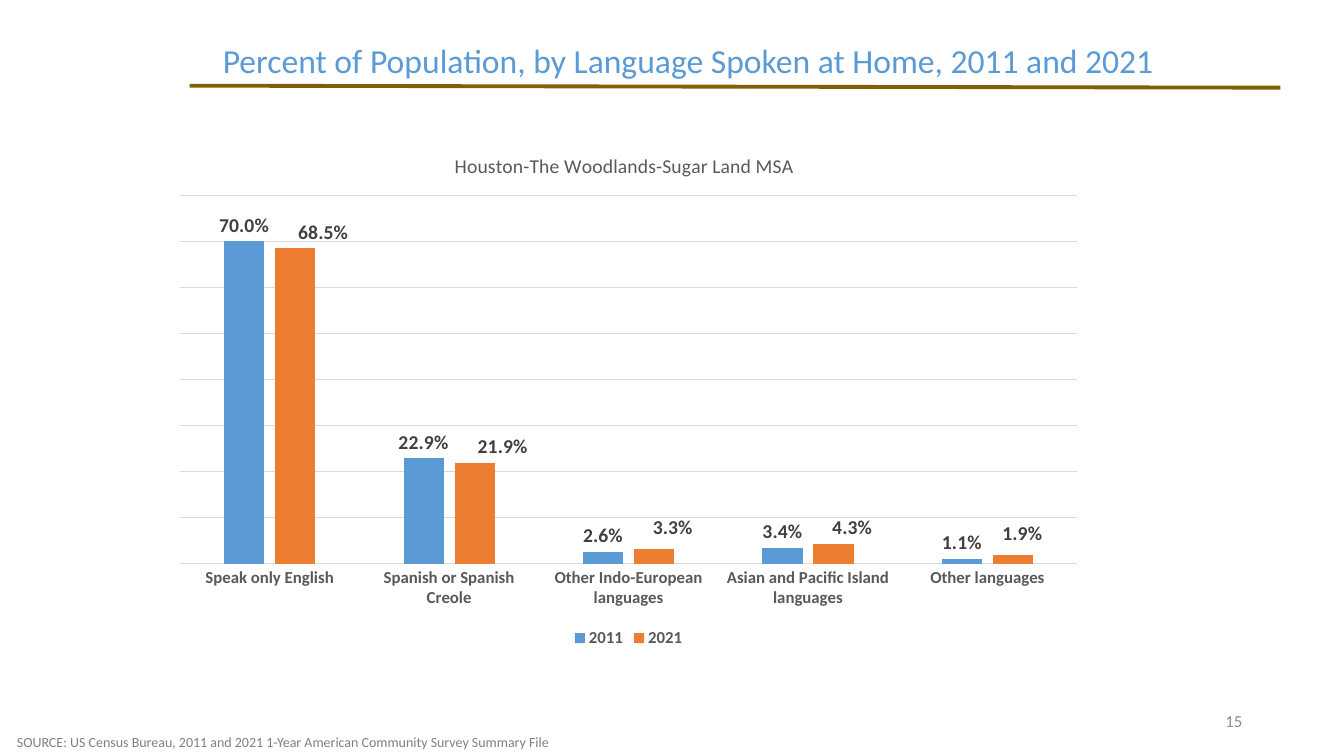
from lxml.etree import SubElement
from pptx import Presentation
from pptx.chart.data import CategoryChartData
from pptx.dml.color import RGBColor
from pptx.enum.chart import XL_CHART_TYPE, XL_LABEL_POSITION, XL_LEGEND_POSITION, XL_TICK_MARK
from pptx.enum.shapes import MSO_CONNECTOR
from pptx.enum.text import MSO_ANCHOR, PP_ALIGN
from pptx.oxml import parse_xml
from pptx.oxml.ns import nsdecls, qn
from pptx.util import Inches, Pt

BLUE = RGBColor(0x5B, 0x9B, 0xD5)
ORANGE = RGBColor(0xED, 0x7D, 0x31)
BROWN = RGBColor(0x80, 0x60, 0x00)
BLACK = RGBColor(0x00, 0x00, 0x00)
LABEL_GRAY = RGBColor(0x40, 0x40, 0x40)
AXIS_GRAY = RGBColor(0x59, 0x59, 0x59)
SOURCE_GRAY = RGBColor(0x80, 0x80, 0x80)
NUMBER_GRAY = RGBColor(0x8C, 0x8C, 0x8C)
GRID_GRAY = RGBColor(0xD9, 0xD9, 0xD9)
PERCENT = "0.0%"
NO_LEADER_LINES = (
    f'<c:extLst {nsdecls("c")}><c:ext uri="{{CE6537A1-D6FC-4f65-9D91-7224C49458BB}}" '
    'xmlns:c15="http://schemas.microsoft.com/office/drawing/2012/chart">'
    '<c15:showLeaderLines val="0"/></c:ext></c:extLst>')


def write(frame, text, size, color, align=PP_ALIGN.LEFT, anchor=MSO_ANCHOR.TOP, wrap=False):
    frame.word_wrap = wrap
    frame.vertical_anchor = anchor
    paragraph = frame.paragraphs[0]
    paragraph.text = text
    paragraph.alignment = align
    style(paragraph.font, size, color)
    return paragraph


def style(font, size, color, bold=False):
    font.name = "Calibri"
    font.size = Pt(size)
    font.bold = bold
    font.color.rgb = color


presentation = Presentation()
presentation.slide_width = Inches(13.33)
presentation.slide_height = Inches(7.5)
slide = presentation.slides.add_slide(presentation.slide_layouts[5])
shapes = slide.shapes

# Title and rule
title = shapes.title
title.left, title.top = Inches(2.11), Inches(0.39)
title.width, title.height = Inches(10), Inches(0.46)
heading = write(title.text_frame, "Percent of Population, by Language Spoken at Home, 2011 and 2021",
                24, BLUE, anchor=MSO_ANCHOR.MIDDLE, wrap=True)
heading.line_spacing = 0.9

rule = shapes.add_connector(MSO_CONNECTOR.STRAIGHT, Inches(1.88), Inches(0.85),
                            Inches(12.7), Inches(0.87))
rule.line.color.rgb = BROWN
rule.line.width = Pt(2.75)
SubElement(rule._element.spPr, qn("a:effectLst"))

# Footer
number_box = shapes.add_textbox(Inches(9.42), Inches(6.95), Inches(3), Inches(0.4))
write(number_box.text_frame, "15", 12, NUMBER_GRAY, align=PP_ALIGN.RIGHT,
      anchor=MSO_ANCHOR.MIDDLE, wrap=True)
source_box = shapes.add_textbox(Inches(0.07), Inches(7.23), Inches(5.57), Inches(0.27))
write(source_box.text_frame,
      "SOURCE: US Census Bureau, 2011 and 2021 1-Year American Community Survey Summary File",
      10, SOURCE_GRAY)

# Chart
data = CategoryChartData(number_format=PERCENT)
data.categories = ["Speak only English", "Spanish or Spanish Creole",
                   "Other Indo-European languages", "Asian and Pacific Island languages",
                   "Other languages"]
data.add_series("2011", [0.7, 0.229, 0.026, 0.034, 0.011])
data.add_series("2021", [0.685, 0.219, 0.033, 0.043, 0.019])
chart = shapes.add_chart(XL_CHART_TYPE.COLUMN_CLUSTERED, Inches(1.6), Inches(1.32),
                         Inches(9.27), Inches(5.15), data).chart
style(chart.font, 10, BLACK)

chart.has_title = True
write(chart.chart_title.text_frame, "Houston-The Woodlands-Sugar Land MSA", 14, AXIS_GRAY,
      align=PP_ALIGN.CENTER)
chart.chart_title.include_in_layout = False

chart.has_legend = True
chart.legend.position = XL_LEGEND_POSITION.BOTTOM
chart.legend.include_in_layout = False
style(chart.legend.font, 12, AXIS_GRAY, bold=True)

category_axis = chart.category_axis
category_axis.major_tick_mark = XL_TICK_MARK.NONE
category_axis.format.line.color.rgb = GRID_GRAY
category_axis.format.line.width = Pt(0.75)
style(category_axis.tick_labels.font, 12, AXIS_GRAY, bold=True)

value_axis = chart.value_axis
value_axis.visible = False
value_axis.minimum_scale, value_axis.maximum_scale = 0, 0.8
value_axis.major_unit = 0.1
value_axis.tick_labels.number_format = PERCENT
value_axis.tick_labels.number_format_is_linked = False
value_axis.has_major_gridlines = True
value_axis.major_gridlines.format.line.color.rgb = GRID_GRAY
value_axis.major_gridlines.format.line.width = Pt(0.75)

plot = chart.plots[0]
plot.vary_by_categories = False
plot.gap_width = 219
plot.overlap = -27
for series, color in zip(plot.series, (BLUE, ORANGE)):
    series.format.fill.solid()
    series.format.fill.fore_color.rgb = color
    labels = series.data_labels
    labels.show_value = True
    labels.number_format = PERCENT
    labels.number_format_is_linked = False
    labels.position = XL_LABEL_POSITION.OUTSIDE_END
    style(labels.font, 14, LABEL_GRAY, bold=True)
    labels._element.append(parse_xml(NO_LEADER_LINES))

# Manual places, as fractions of the chart: 2021 labels, title and plot area
label_shifts = [(0.03, 0), (0.03, 0), (0.02, -0.01), (0.02, 0), (0.01, -0.01)]
layouts = []
for index, (x, y) in enumerate(label_shifts):
    label = plot.series[1].points[index].data_label
    style(label.font, 14, LABEL_GRAY, bold=True)
    label.position = XL_LABEL_POSITION.OUTSIDE_END
    id_element = plot.series[1].data_labels._element.findall(qn("c:dLbl"))[index].find(qn("c:idx"))
    id_element.addnext(parse_xml(
        f'<c:numFmt {nsdecls("c")} formatCode="{PERCENT}" sourceLinked="0"/>'))
    layouts.append((id_element, {"x": x, "y": y}))
layouts.append((chart.chart_title._element.find(qn("c:tx")),
                {"xMode": "edge", "yMode": "edge", "x": 0.31, "y": 0.03}))
plot_area = chart._chartSpace.chart.plotArea
for layout in plot_area.findall(qn("c:layout")):
    plot_area.remove(layout)
layouts.append((None, {"layoutTarget": "inner", "xMode": "edge", "yMode": "edge",
                       "x": 0.02, "y": 0.12, "w": 0.96, "h": 0.71}))
for previous, settings in layouts:
    layout = parse_xml(f'<c:layout {nsdecls("c")}><c:manualLayout/></c:layout>')
    for name, value in settings.items():
        SubElement(layout[0], qn(f"c:{name}")).set("val", str(value))
    if previous is None:
        plot_area.insert(0, layout)
    else:
        for old_layout in previous.getparent().findall(qn("c:layout")):
            previous.getparent().remove(old_layout)
        previous.addnext(layout)

presentation.save("out.pptx")
